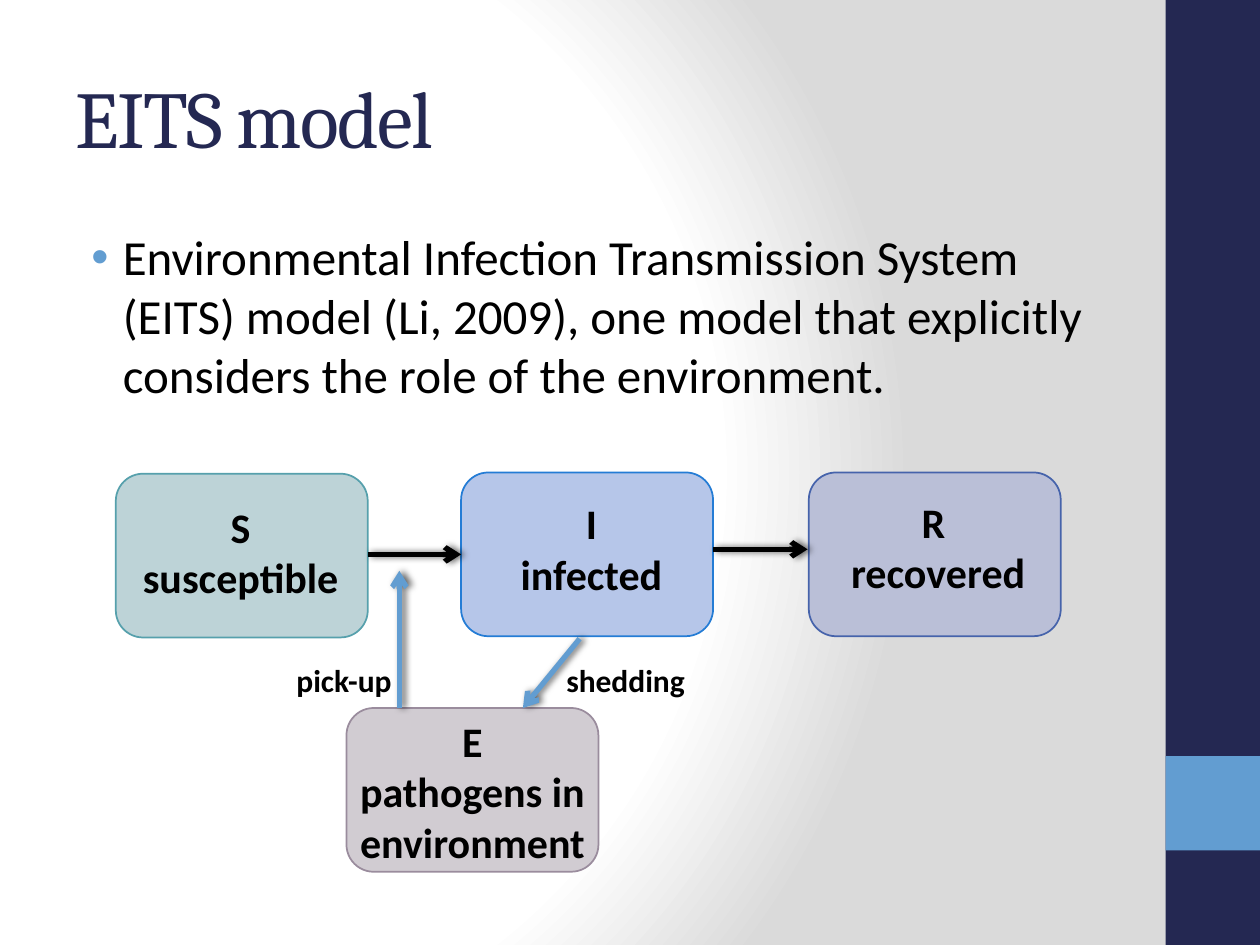
"""Build the EITS model slide: a title, one bullet and a compartment diagram."""
from typing import Any, NamedTuple

from lxml.etree import SubElement
from pptx import Presentation
from pptx.dml.color import RGBColor
from pptx.enum.shapes import MSO_CONNECTOR as Connector, MSO_SHAPE as Preset
from pptx.enum.text import MSO_ANCHOR as Anchor, MSO_AUTO_SIZE as AutoSize, PP_ALIGN as Align
from pptx.oxml import parse_xml
from pptx.oxml.ns import nsdecls, qn
from pptx.util import Pt

NAVY, BLUE, BLACK = "242852", "629DD1", "000000"
BOX_WIDTH, BOX_HEIGHT = 144, 93.6
BACKGROUND_STOPS = ((0, "FFFFFF"), (75, "FFFFFF"), (100, "DADADA"))


class Frame(NamedTuple):
    left: float
    top: float
    width: float
    height: float


class Compartment(NamedTuple):
    left: float
    top: float
    fill: str
    outline: str
    text: str
    text_frame: Frame


class Arrow(NamedTuple):
    start: tuple[float, float]
    end: tuple[float, float]
    colour: str


class Label(NamedTuple):
    text: str
    frame: Frame


BARS = (
    (Frame(666, 0, 54, 540), NAVY),
    (Frame(666, 432, 54, 54), BLUE),
)
COMPARTMENTS = (
    Compartment(66.2, 270.7, "BDD3D7", "56A0AC", "S\nsusceptible", Frame(77, 285.1, 121, 61.2)),
    Compartment(263.5, 270, "B6C6E9", "247CD5", "I\ninfected", Frame(292.3, 283, 91.4, 61.2)),
    Compartment(462.2, 270, "BABFD7", "4663AB", "R \nrecovered", Frame(473.8, 282.2, 124.6, 61.2)),
    Compartment(198, 404.6, "D1CCD2", "9A8C9D", "E\npathogens in environment",
                Frame(198, 407.5, 144, 90)),
)
ARROWS = (
    Arrow((210.2, 316.8), (263.5, 316.8), BLACK),
    Arrow((407.5, 313.9), (461.5, 313.9), BLACK),
    Arrow((228.2, 404.6), (228.2, 326.2), BLUE),
    Arrow((331.2, 365), (298.8, 404.6), BLUE),
)
LABELS = (
    Label("shedding", Frame(283, 374.4, 149, 28.8)),
    Label("pick-up", Frame(129.6, 374.4, 134, 28.8)),
)


def colour_of(value: str) -> RGBColor:
    """Turn a hex string into a colour."""
    return RGBColor.from_string(value)


def apply_format(target: Any, values: dict[str, Any]) -> None:
    """Set each named attribute of the target."""
    for name, value in values.items():
        setattr(target, name, value)


def place(shape: Any, frame: Frame) -> None:
    """Move and size a shape to a frame given in points."""
    apply_format(shape, {name: Pt(value) for name, value in frame._asdict().items()})


def format_font(font: Any, name: str, size: float, colour: str, bold: bool = False) -> None:
    """Format a font."""
    apply_format(font, {"name": name, "size": Pt(size), "bold": bold})
    font.color.rgb = colour_of(colour)


def set_background(slide: Any) -> None:
    """Give the slide a circular gradient."""
    slide.background.fill.solid()
    stops = "".join(
        f'<a:gs pos="{position * 1000}"><a:srgbClr val="{colour}"/></a:gs>'
        for position, colour in BACKGROUND_STOPS
    )
    gradient = parse_xml(
        f'<a:gradFill {nsdecls("a")} rotWithShape="1"><a:gsLst>{stops}</a:gsLst>'
        '<a:path path="circle"><a:fillToRect l="20000" t="50000" r="100000" b="50000"/></a:path>'
        "</a:gradFill>"
    )
    properties = next(slide.element.iter(qn("p:bgPr")))
    properties.replace(properties[0], gradient)


def add_block(slide: Any, preset: Preset, frame: Frame, fill: str, outline: str | None = None) -> None:
    """Draw a filled shape, outlined if a line colour is given."""
    shape = slide.shapes.add_shape(preset, *map(Pt, frame))
    shape.shadow.inherit = False
    shape.fill.solid()
    shape.fill.fore_color.rgb = colour_of(fill)
    if outline is None:
        shape.line.fill.background()
    else:
        shape.line.color.rgb = colour_of(outline)
        shape.line.width = Pt(1)


def add_text(slide: Any, label: Label, size: float, margins: tuple[float, float]) -> None:
    """Draw centred bold text, one paragraph a line."""
    text_frame = slide.shapes.add_textbox(*map(Pt, label.frame)).text_frame
    horizontal, vertical = map(Pt, margins)
    apply_format(text_frame, {
        "text": label.text, "word_wrap": True, "auto_size": AutoSize.SHAPE_TO_FIT_TEXT,
        "margin_left": horizontal, "margin_right": horizontal,
        "margin_top": vertical, "margin_bottom": vertical,
    })
    for paragraph in text_frame.paragraphs:
        paragraph.alignment = Align.CENTER
        format_font(paragraph.runs[0].font, "Calibri", size, BLACK, True)


def add_arrow(slide: Any, arrow: Arrow) -> None:
    """Draw a line with an open arrowhead and a soft shadow."""
    connector = slide.shapes.add_connector(Connector.STRAIGHT, *map(Pt, arrow.start + arrow.end))
    connector.line.color.rgb = colour_of(arrow.colour)
    connector.line.width = Pt(3)
    properties = connector._element.spPr
    SubElement(properties.find(qn("a:ln")), qn("a:tailEnd"), type="arrow")
    properties.append(parse_xml(
        f'<a:effectLst {nsdecls("a")}>'
        f'<a:outerShdw blurRad="{Pt(4)}" dist="{Pt(2)}" dir="0" rotWithShape="0">'
        f'<a:srgbClr val="{BLACK}"><a:alpha val="60000"/></a:srgbClr></a:outerShdw></a:effectLst>'
    ))


def fill_title(title: Any) -> None:
    """Write the title."""
    place(title, Frame(36, 21.6, 599.8, 90))
    apply_format(title.text_frame, {"text": "EITS model", "vertical_anchor": Anchor.MIDDLE})
    paragraph = title.text_frame.paragraphs[0]
    paragraph.alignment = Align.LEFT
    format_font(paragraph.runs[0].font, "Cambria", 46, NAVY)
    paragraph.runs[0]._r.get_or_add_rPr().set("spc", "-100")


def fill_body(body: Any) -> None:
    """Write the bullet."""
    place(body, Frame(36, 126, 599.8, 378))
    body.text_frame.text = (
        "Environmental Infection Transmission System (EITS) model (Li, 2009), "
        "one model that explicitly considers the role of the environment."
    )
    paragraph = body.text_frame.paragraphs[0]
    format_font(paragraph.runs[0].font, "Calibri", 28, BLACK)
    properties = paragraph._p.get_or_add_pPr()
    properties.set("marL", str(Pt(27)))
    properties.set("indent", str(Pt(-18)))
    SubElement(SubElement(properties, qn("a:buClr")), qn("a:srgbClr"), val=BLUE)
    SubElement(properties, qn("a:buFont"), typeface="Arial")
    SubElement(properties, qn("a:buChar"), char="•")


def main() -> None:
    """Build and save the presentation."""
    presentation = Presentation()
    apply_format(presentation, {"slide_width": Pt(720), "slide_height": Pt(540)})
    slide = presentation.slides.add_slide(presentation.slide_layouts[1])
    set_background(slide)
    fill_title(slide.shapes.title)
    fill_body(slide.placeholders[1])
    for frame, fill in BARS:
        add_block(slide, Preset.RECTANGLE, frame, fill)
    for box in COMPARTMENTS:
        frame = Frame(box.left, box.top, BOX_WIDTH, BOX_HEIGHT)
        add_block(slide, Preset.ROUNDED_RECTANGLE, frame, box.fill, box.outline)
        add_text(slide, Label(box.text, box.text_frame), 24, (2.9, 1.4))
    for arrow in ARROWS:
        add_arrow(slide, arrow)
    for label in LABELS:
        add_text(slide, label, 18, (7.2, 3.6))
    presentation.save("out.pptx")


if __name__ == "__main__":
    main()
